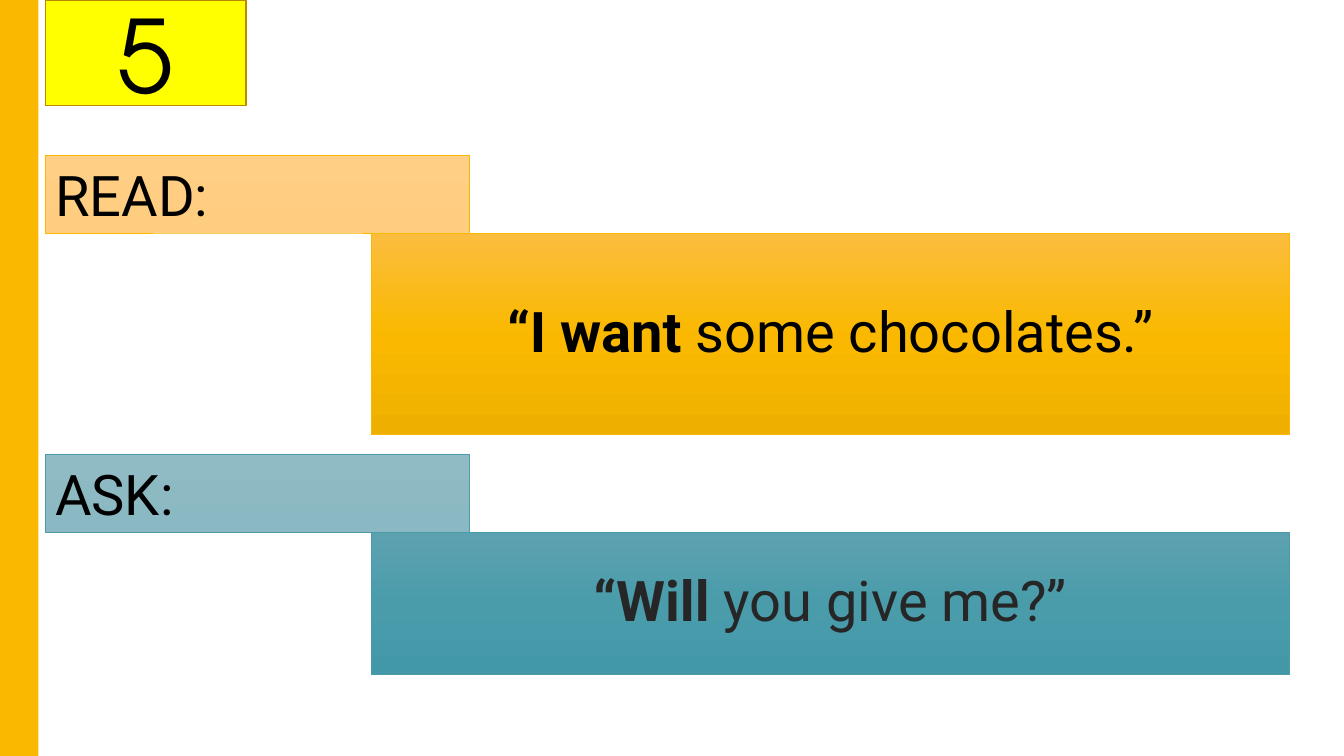
from lxml import etree
from pptx import Presentation
from pptx.dml.color import RGBColor
from pptx.enum.shapes import MSO_SHAPE
from pptx.enum.text import MSO_ANCHOR, PP_ALIGN
from pptx.oxml.ns import qn
from pptx.util import Inches, Pt

RECTANGLE = MSO_SHAPE.RECTANGLE
TOP, MIDDLE = MSO_ANCHOR.TOP, MSO_ANCHOR.MIDDLE
LEFT, CENTER = PP_ALIGN.LEFT, PP_ALIGN.CENTER

BLACK = RGBColor(0x00, 0x00, 0x00)
CHARCOAL = RGBColor(0x26, 0x26, 0x26)
YELLOW = RGBColor(0xFF, 0xFF, 0x00)
BRONZE = RGBColor(0xB9, 0x89, 0x00)
AMBER = RGBColor(0xFA, 0xB9, 0x00)
AMBER_LIGHT = RGBColor(0xFB, 0xBD, 0x3F)
AMBER_DARK = RGBColor(0xEF, 0xAF, 0x00)
PEACH = RGBColor(0xFF, 0xCF, 0x86)
PEACH_DARK = RGBColor(0xFF, 0xCD, 0x80)
TEAL = RGBColor(0x4B, 0x9B, 0xAA)
TEAL_LIGHT = RGBColor(0x5C, 0xA1, 0xAF)
TEAL_MIDDLE = RGBColor(0x4A, 0x9C, 0xAB)
TEAL_DARK = RGBColor(0x43, 0x98, 0xA8)
MIST = RGBColor(0x90, 0xBA, 0xC4)
MIST_DARK = RGBColor(0x8A, 0xB8, 0xC3)

# Percentages of the slide's width and height
LABEL_LEFT, LABEL_WIDTH, LABEL_HEIGHT = 3.38, 31.58, 10.3
PANEL_LEFT, PANEL_WIDTH = 27.6, 68.33


class CardSlide:
    """Holds the text style and the slide, and draws its boxes."""

    font = "Roboto"
    number_font = "TeX Gyre Adventor"
    text_size = Pt(40)
    number_size = Pt(72)
    panel_inset = Inches(0.2)

    def __init__(self, presentation):
        self.column = presentation.slide_width / 100
        self.row = presentation.slide_height / 100
        self.slide = presentation.slides.add_slide(presentation.slide_layouts[6])

    def box(self, left, top, width, height, colors, line=None, line_width=0.5):
        shape = self.slide.shapes.add_shape(
            RECTANGLE, round(left * self.column), round(top * self.row),
            round(width * self.column), round(height * self.row))
        shape.shadow.inherit = False
        if len(colors) == 1:
            shape.fill.solid()
            shape.fill.fore_color.rgb = colors[0]
        else:
            self.gradient(shape, colors)
        if line is None:
            shape.line.fill.background()
        else:
            shape.line.color.rgb = line
            shape.line.width = Pt(line_width)
        return shape

    def gradient(self, shape, colors):
        """Spread the colours evenly from top to bottom."""
        shape.fill.gradient()
        shape.fill.gradient_angle = 270
        stops = shape._element.spPr.find(qn("a:gradFill")).find(qn("a:gsLst"))
        for stop in list(stops):
            stops.remove(stop)
        for index, color in enumerate(colors):
            position = round(100000 * index / (len(colors) - 1))
            stop = etree.SubElement(stops, qn("a:gs"), pos=str(position))
            etree.SubElement(stop, qn("a:srgbClr"), val=str(color))

    def add_text(self, shape, text, color, font, size, align, anchor, bold_start=""):
        frame = shape.text_frame
        frame.word_wrap = True
        frame.vertical_anchor = anchor
        paragraph = frame.paragraphs[0]
        paragraph.alignment = align
        for part, bold in ((bold_start, True), (text, False)):
            if part:
                run = paragraph.add_run()
                run.text = part
                run.font.name = font
                run.font.size = size
                run.font.bold = bold
                run.font.color.rgb = color

    def number(self, text):
        shape = self.box(LABEL_LEFT, 0, 14.93, 14, [YELLOW], BRONZE, 1)
        self.add_text(shape, text, BLACK, self.number_font, self.number_size, CENTER, MIDDLE)

    def label(self, top, text, colors, line):
        shape = self.box(LABEL_LEFT, top, LABEL_WIDTH, LABEL_HEIGHT, colors, line)
        self.add_text(shape, text, BLACK, self.font, self.text_size, LEFT, TOP)

    def panel(self, top, height, bold_start, text, color, colors, line):
        shape = self.box(PANEL_LEFT, top, PANEL_WIDTH, height, colors, line)
        frame = shape.text_frame
        frame.margin_left = frame.margin_right = self.panel_inset
        frame.margin_top = frame.margin_bottom = self.panel_inset
        self.add_text(shape, text, color, self.font, self.text_size, CENTER, MIDDLE, bold_start)
        frame.paragraphs[0].line_spacing = 0.9


def main():
    presentation = Presentation()
    presentation.slide_width = Inches(13.33)
    presentation.slide_height = Inches(7.5)
    card = CardSlide(presentation)

    # Side bar and card number
    card.box(0, 0, 2.85, 100, [AMBER])
    card.number("5")

    # Sentence to read
    read_top = 20.53
    card.label(read_top, "READ:", [PEACH, PEACH_DARK], AMBER)
    card.panel(read_top + LABEL_HEIGHT, 26.7, "“I want", " some chocolates.”",
               BLACK, [AMBER_LIGHT, AMBER, AMBER_DARK], AMBER)

    # Question to ask
    ask_top = 60.13
    card.label(ask_top, "ASK:", [MIST, MIST_DARK], TEAL)
    card.panel(ask_top + LABEL_HEIGHT, 18.8, "“Will ", "you give me?”",
               CHARCOAL, [TEAL_LIGHT, TEAL_MIDDLE, TEAL_DARK], TEAL)

    presentation.save("out.pptx")


if __name__ == "__main__":
    main()
